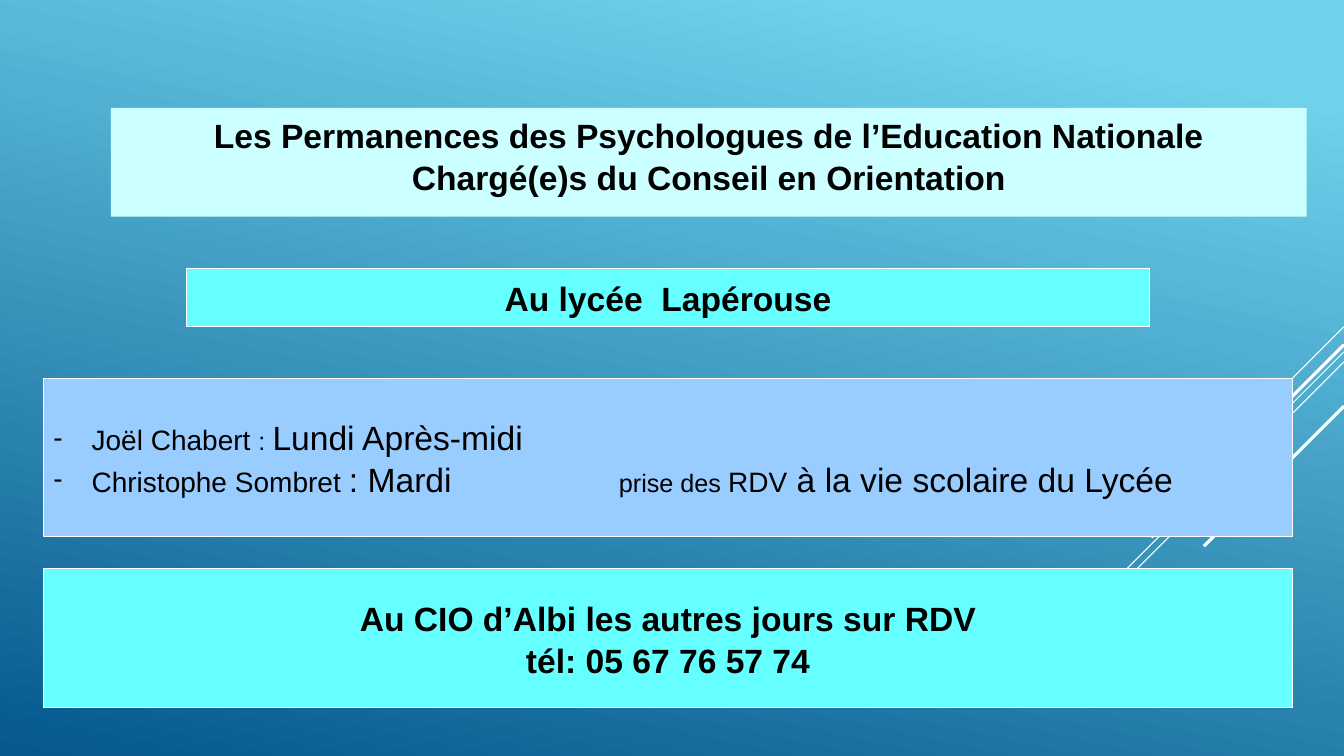
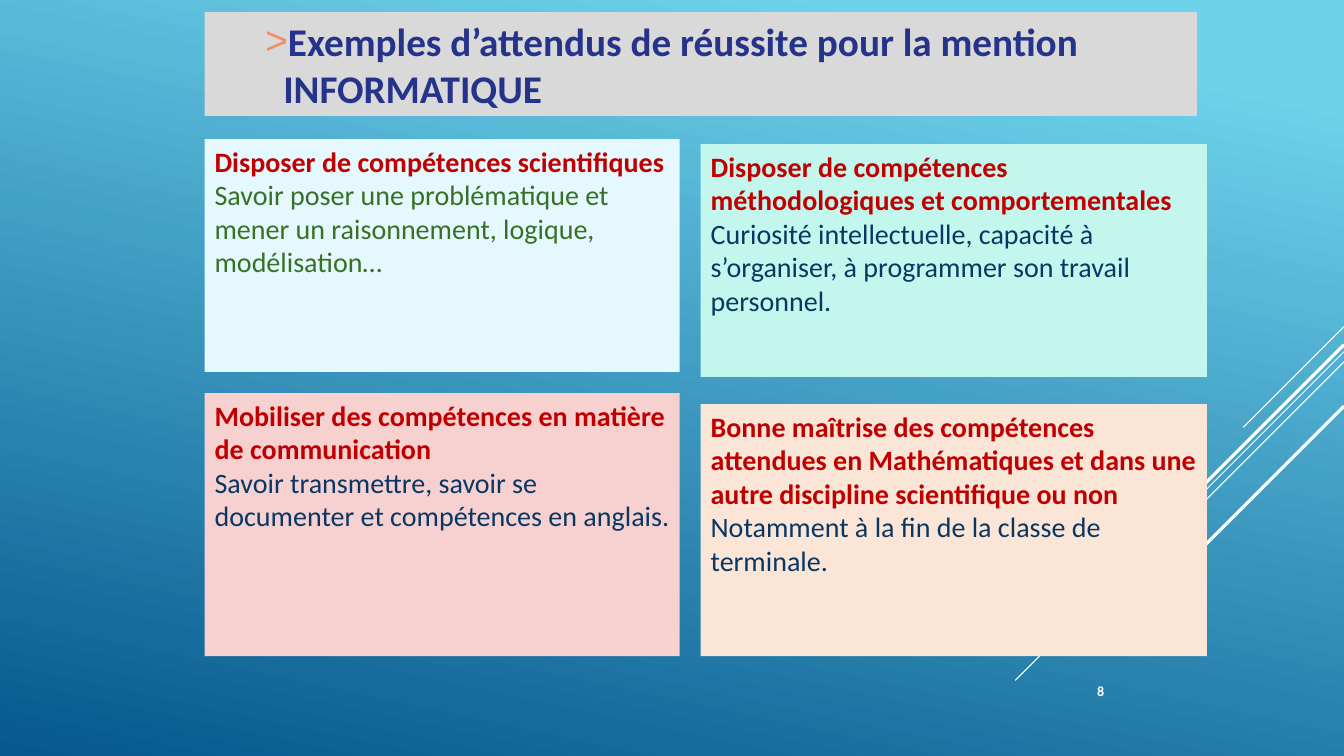
from lxml.etree import SubElement
from pptx import Presentation
from pptx.dml.color import RGBColor
from pptx.enum.shapes import MSO_CONNECTOR, MSO_SHAPE
from pptx.enum.text import MSO_ANCHOR, MSO_AUTO_SIZE, PP_ALIGN
from pptx.oxml.ns import qn
from pptx.util import Inches, Pt

SKY = RGBColor(0x6E, 0xD2, 0xEB)
DEEP_BLUE = RGBColor(0x06, 0x58, 0x8E)
WHITE = RGBColor(0xFF, 0xFF, 0xFF)
BLACK = RGBColor(0x00, 0x00, 0x00)
PALE_CYAN = RGBColor(0xCC, 0xFF, 0xFF)
CYAN = RGBColor(0x66, 0xFF, 0xFF)
LIGHT_BLUE = RGBColor(0x99, 0xCC, 0xFF)
GREY = RGBColor(0xD9, 0xD9, 0xD9)
ICE = RGBColor(0xE4, 0xF8, 0xFD)
MINT = RGBColor(0xC3, 0xF7, 0xED)
PINK = RGBColor(0xF7, 0xD0, 0xD0)
PEACH = RGBColor(0xFA, 0xE5, 0xD7)
INDIGO = RGBColor(0x26, 0x33, 0x8B)
RED = RGBColor(0xC0, 0x00, 0x00)
GREEN = RGBColor(0x38, 0x70, 0x26)
NAVY = RGBColor(0x08, 0x37, 0x63)
CORAL = RGBColor(0xF2, 0x8E, 0x65)


def write(sp, paragraphs, font="Arial", size=24, color=BLACK, bold=False,
          align=PP_ALIGN.LEFT, anchor=MSO_ANCHOR.TOP, spacing=1.0,
          bullet=None, bullet_color=BLACK, indent=(0, 0), tab=None):
    """Fill a shape; each paragraph is a list of (text, overrides) runs."""
    tf = sp.text_frame
    tf.word_wrap = True
    tf.auto_size = MSO_AUTO_SIZE.NONE
    tf.vertical_anchor = anchor
    for i, runs in enumerate(paragraphs):
        p = tf.add_paragraph() if i else tf.paragraphs[0]
        p.alignment = align
        p.line_spacing = spacing
        if bullet:
            pPr = p._p.get_or_add_pPr()
            pPr.set("marL", str(Inches(indent[0])))
            pPr.set("indent", str(Inches(indent[1])))
            clr = SubElement(pPr, qn("a:buClr"))
            SubElement(clr, qn("a:srgbClr"), val=str(bullet_color))
            SubElement(pPr, qn("a:buFont"), typeface="Arial")
            SubElement(pPr, qn("a:buChar"), char=bullet)
            if tab:
                tabs = SubElement(pPr, qn("a:tabLst"))
                SubElement(tabs, qn("a:tab"), pos=str(Inches(tab)), algn="l")
        for text, style in runs:
            r = p.add_run()
            r.text = text
            r.font.name = font
            r.font.size = Pt(style.get("size", size))
            r.font.bold = style.get("bold", bold)
            r.font.color.rgb = style.get("color", color)


def panel(s, box, fill, title=False, outline=False):
    """Place the slide title or a new rectangle as a filled panel."""
    box = [Inches(v) for v in box]
    if title:
        sp = s.shapes.title
        sp.left, sp.top, sp.width, sp.height = box
    else:
        sp = s.shapes.add_shape(MSO_SHAPE.RECTANGLE, *box)
        sp.shadow.inherit = False
    sp.fill.solid()
    sp.fill.fore_color.rgb = fill
    if outline:
        sp.line.color.rgb = WHITE
        sp.line.width = Pt(0.75)
    else:
        sp.line.fill.background()
    return sp


prs = Presentation()
prs.slide_width = Inches(13.33)
prs.slide_height = Inches(7.5)
master = prs.slide_master
layout = prs.slide_layouts[5]

# Shared gradient background
bg = master.background.fill
bg.gradient()
bg.gradient_angle = 258
for stop, (position, color) in zip(bg.gradient_stops, [(0.1, SKY), (1, DEEP_BLUE)]):
    stop.position = position
    stop.color.rgb = color

# Shared diagonal lines, kept on the master: start height, length, weight
s = prs.slides.add_slide(layout)
for y, run, weight in [(3.24, 1, 0.75), (3.49, 3.26, 0.75), (3.59, 2.07, 0.75),
                       (3.42, 1.91, 2.25), (4.03, 1.39, 2.25)]:
    ln = s.shapes.add_connector(MSO_CONNECTOR.STRAIGHT, Inches(13.33), Inches(y),
                                Inches(13.33 - run), Inches(y + run))
    ln.line.color.rgb = WHITE
    ln.line.width = Pt(weight)
    SubElement(ln.element.spPr, qn("a:effectLst"))
    master.element.cSld.spTree.append(ln.element)

# Slide 1: title and headings
headings = [
    ((1.1, 1.07, 11.86, 1.08), PALE_CYAN, True, MSO_ANCHOR.TOP,
     ["Les Permanences des Psychologues de l’Education Nationale",
      "Chargé(e)s du Conseil en Orientation"]),
    ((1.85, 2.66, 9.55, 0.58), CYAN, False, MSO_ANCHOR.MIDDLE,
     ["Au lycée  Lapérouse"]),
    ((0.43, 5.64, 12.39, 1.38), CYAN, False, MSO_ANCHOR.MIDDLE,
     ["Au CIO d’Albi les autres jours sur RDV", "tél: 05 67 76 57 74"]),
]
for box, fill, is_title, anchor, lines in headings:
    sp = panel(s, box, fill, title=is_title, outline=not is_title)
    write(sp, [[(line, {})] for line in lines], bold=True,
          align=PP_ALIGN.CENTER, anchor=anchor, spacing=1.05)

# Slide 1: opening days
sp = panel(s, (0.43, 3.76, 12.39, 1.56), LIGHT_BLUE, outline=True)
write(sp, [
    [("Joël Chabert ", {"size": 20}), (": ", {"size": 18}), ("Lundi Après-midi", {})],
    [("Christophe Sombret ", {"size": 20}), (": Mardi\t", {}),
     ("prise des ", {"size": 18}), ("RDV", {"size": 20}),
     (" à la vie scolaire du Lycée", {})],
], anchor=MSO_ANCHOR.MIDDLE, spacing=1.03, bullet="-", indent=(0.38, -0.38), tab=5.61)

# Slide 2: title
s = prs.slides.add_slide(layout)
sp = panel(s, (2.03, 0.12, 9.84, 1.03), GREY, title=True)
write(sp, [[("Exemples d’attendus de réussite pour la mention INFORMATIQUE", {})]],
      font="Calibri", size=28, color=INDIGO, bold=True,
      bullet=">", bullet_color=CORAL, indent=(0.68, -0.18))

# Slide 2: four skill cards
cards = [
    ((2.03, 1.38, 4.71, 2.31), ICE, GREEN,
     "Disposer de compétences scientifiques",
     "Savoir poser une problématique et mener un raisonnement, logique, modélisation…"),
    ((6.95, 1.43, 5.02, 2.31), MINT, NAVY,
     "Disposer de compétences méthodologiques et comportementales",
     "Curiosité intellectuelle, capacité à s’organiser, à programmer son travail personnel."),
    ((2.03, 3.9, 4.71, 2.61), PINK, NAVY,
     "Mobiliser des compétences en matière de communication",
     "Savoir transmettre, savoir se documenter et compétences en anglais."),
    ((6.95, 4.01, 5.02, 2.5), PEACH, NAVY,
     "Bonne maîtrise des compétences attendues en Mathématiques et dans une autre "
     "discipline scientifique ou non",
     "Notamment à la fin de la classe de terminale."),
]
for box, fill, color, heading, body in cards:
    write(panel(s, box, fill),
          [[(heading, {"color": RED, "bold": True})], [(body, {})]],
          font="Calibri", size=20, color=color)

# Slide 2: page number
sp = s.shapes.add_textbox(Inches(10.56), Inches(6.65), Inches(0.49), Inches(0.4))
write(sp, [[("8", {})]], font="Calibri", size=10, color=WHITE, bold=True,
      align=PP_ALIGN.RIGHT, anchor=MSO_ANCHOR.MIDDLE)

prs.save("out.pptx")
